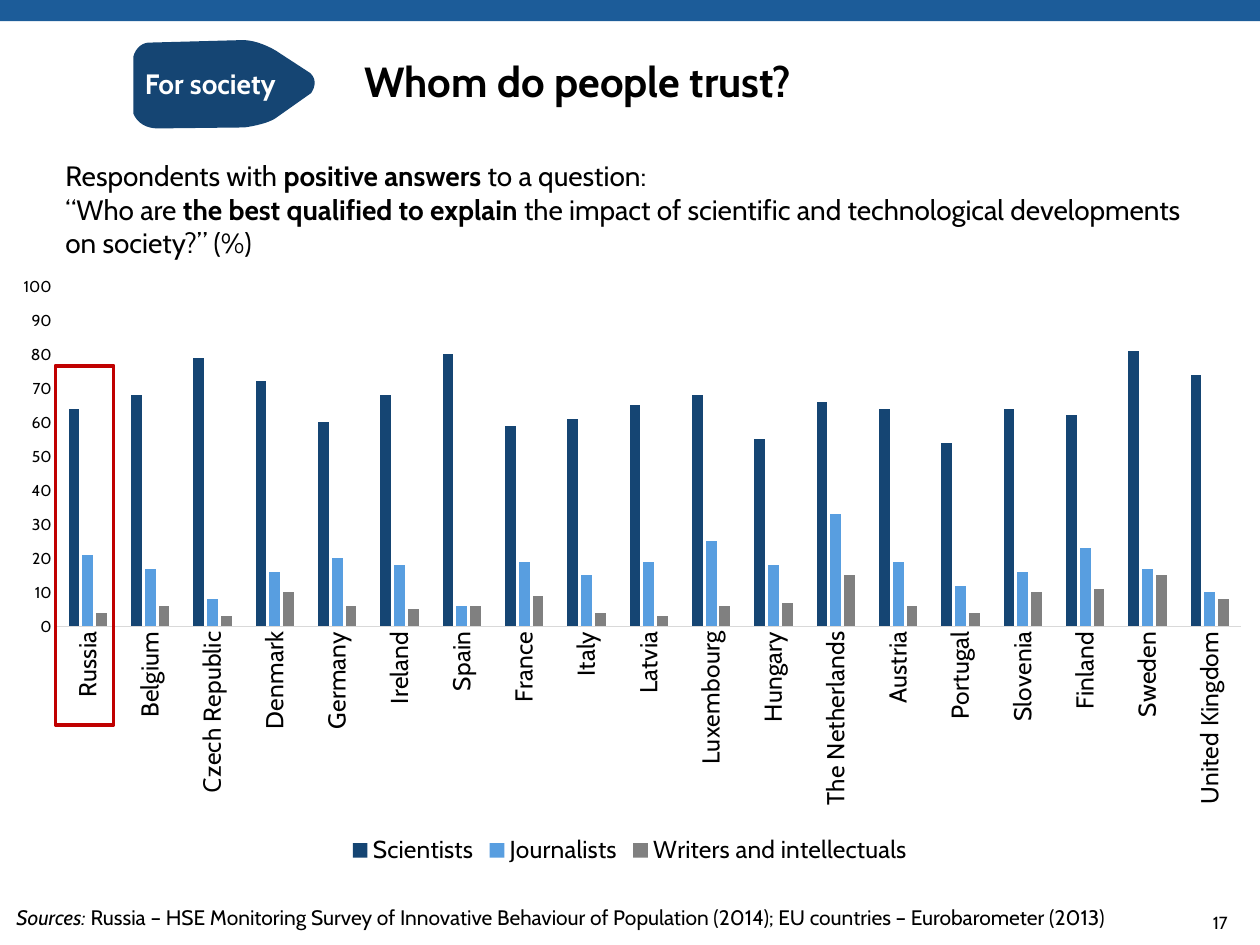
from typing import NamedTuple, Optional

from lxml import etree
from pptx import Presentation
from pptx import util as u
from pptx.chart.data import CategoryChartData
from pptx.dml.color import RGBColor
from pptx.enum import chart as ch, shapes, text
from pptx.oxml import parse_xml
from pptx.oxml.ns import nsdecls, qn

FONT = "Cabin"
BLACK = RGBColor(0x00, 0x00, 0x00)
WHITE = RGBColor(0xFF, 0xFF, 0xFF)
BLUE = RGBColor(0x1C, 0x5C, 0x99)
NAVY = RGBColor(0x15, 0x45, 0x73)
SKY = RGBColor(0x58, 0x9E, 0xE0)
GREY = RGBColor(0x80, 0x80, 0x80)
PALE = RGBColor(0xD9, 0xD9, 0xD9)
RED = RGBColor(0xC0, 0x00, 0x00)


class Box(NamedTuple):
    """Left, top, width and height in centimetres."""
    x: float
    y: float
    w: float
    h: float

    def emu(self) -> list:
        return [u.Cm(v) for v in self]


class Run(NamedTuple):
    text: str
    bold: bool = False
    italic: bool = False


class Series(NamedTuple):
    name: str
    color: RGBColor
    values: tuple


class Segment(NamedTuple):
    """Curve leaving straight from the last point towards its control."""
    control: tuple
    end: tuple


COUNTRIES = ("Russia", "Belgium", "Сzech Republic", "Denmark", "Germany", "Ireland",
             "Spain", "France", "Italy", "Latvia", "Luxembourg", "Hungary",
             "The Netherlands", "Austria", "Portugal", "Slovenia", "Finland",
             "Sweden", "United Kingdom")
ANSWERS = (
    Series("Scientists", NAVY, (64, 68, 79, 72, 60, 68, 80, 59, 61, 65,
                                68, 55, 66, 64, 54, 64, 62, 81, 74)),
    Series("Journalists", SKY, (21, 17, 8, 16, 20, 18, 6, 19, 15, 19,
                                25, 18, 33, 19, 12, 16, 23, 17, 10)),
    Series("Writers and intellectuals", GREY, (4, 6, 3, 10, 6, 5, 6, 9, 4, 3,
                                               6, 7, 15, 6, 4, 10, 11, 15, 8)),
)
TAG_START = (2.69, 1.14)
TAG_OUTLINE = (
    Segment((2.69, 2.29), (2.69, 2.29)),
    Segment((2.79, 2.59), (3.18, 2.59)),
    Segment((4.93, 2.57), (4.93, 2.57)),
    Segment((5.41, 2.51), (5.59, 2.36)),
    Segment((6.27, 1.88), (6.27, 1.88)),
    Segment((6.45, 1.65), (6.25, 1.47)),
    Segment((5.59, 1.04), (5.59, 1.04)),
    Segment((5.21, 0.79), (4.85, 0.81)),
    Segment((3.0, 0.86), (3.0, 0.86)),
    Segment((2.77, 0.86), TAG_START),
)


def style_font(font, size: float, color: RGBColor = BLACK,
               bold: bool = False, italic: bool = False) -> None:
    font.name, font.size = FONT, u.Pt(size)
    font.bold, font.italic = bold, italic
    font.color.rgb = color


def write(sp, *lines: tuple, size: float, color: RGBColor = BLACK,
          align=text.PP_ALIGN.LEFT, anchor=text.MSO_ANCHOR.TOP, grow: bool = False) -> None:
    """Fill a shape with one paragraph; each line is a tuple of runs."""
    tf = sp.text_frame
    tf.word_wrap = True
    tf.vertical_anchor = anchor
    tf.auto_size = (text.MSO_AUTO_SIZE.SHAPE_TO_FIT_TEXT if grow
                    else text.MSO_AUTO_SIZE.NONE)
    p = tf.paragraphs[0]
    p.alignment = align
    for i, line in enumerate(lines):
        if i:
            p.add_line_break()
        for run in line:
            r = p.add_run()
            r.text = run.text
            style_font(r.font, size, color, run.bold, run.italic)


def paint(sp, fill: Optional[RGBColor] = None, line: Optional[RGBColor] = None) -> None:
    sp.shadow.inherit = False
    if fill is None:
        sp.fill.background()
    else:
        sp.fill.solid()
        sp.fill.fore_color.rgb = fill
    if line is None:
        sp.line.fill.background()
    else:
        sp.line.color.rgb = line
        sp.line.width = u.Pt(2.25)


def add_rect(s, box: Box, **colors):
    sp = s.shapes.add_shape(shapes.MSO_SHAPE.RECTANGLE, *box.emu())
    paint(sp, **colors)
    return sp


def add_outline(s, start: tuple, segments: tuple, fill: RGBColor, steps: int = 12) -> None:
    points, last = [], start
    for control, end in segments:
        n = 1 if control == end else steps
        for t in (k / n for k in range(1, n + 1)):
            weights = ((1 - t) ** 3 + 3 * t * (1 - t) ** 2, 3 * t * t * (1 - t), t ** 3)
            points.append(tuple(u.Cm(sum(w * q[i] for w, q in zip(weights, (last, control, end))))
                                for i in (0, 1)))
        last = end
    builder = s.shapes.build_freeform(u.Cm(start[0]), u.Cm(start[1]))
    builder.add_line_segments(points, close=True)
    paint(builder.convert_to_shape(), fill=fill)


def add_trust_chart(s, box: Box) -> None:
    data = CategoryChartData(number_format="#,##0")
    data.categories = COUNTRIES
    for answer in ANSWERS:
        data.add_series(answer.name, answer.values)
    chart = s.shapes.add_chart(ch.XL_CHART_TYPE.COLUMN_CLUSTERED, *box.emu(), data).chart
    style_font(chart.font, 10)
    chart.has_title = False

    # Columns
    plot = chart.plots[0]
    plot.gap_width, plot.overlap, plot.vary_by_categories = 219, -27, False
    for series, answer in zip(plot.series, ANSWERS):
        series.format.fill.solid()
        series.format.fill.fore_color.rgb = answer.color

    # Axes
    cat, val = chart.category_axis, chart.value_axis
    for axis, size in ((cat, 14), (val, 9)):
        axis.has_major_gridlines = False
        axis.major_tick_mark = axis.minor_tick_mark = ch.XL_TICK_MARK.NONE
        style_font(axis.tick_labels.font, size)
    cat.format.line.color.rgb = PALE
    cat.format.line.width = u.Pt(0.75)
    cat._element.find(qn("c:txPr")).find(qn("a:bodyPr")).set("rot", "-5400000")
    val.minimum_scale, val.maximum_scale, val.major_unit = 0, 100, 10
    val.format.line.fill.background()

    # Legend
    chart.has_legend = True
    chart.legend.position = ch.XL_LEGEND_POSITION.BOTTOM
    chart.legend.include_in_layout = False
    style_font(chart.legend.font, 14)

    # Inner plot area as shares of the chart
    area = chart._chartSpace.chart.plotArea
    for old in area.findall(qn("c:layout")):
        area.remove(old)
    layout = parse_xml(f"<c:layout {nsdecls('c')}><c:manualLayout/></c:layout>")
    settings = (("layoutTarget", "inner"), ("xMode", "edge"), ("yMode", "edge"),
                ("x", "0.045"), ("y", "0.032"), ("w", "0.94"), ("h", "0.564"))
    for tag, value in settings:
        etree.SubElement(layout[0], qn(f"c:{tag}")).set("val", value)
    area.insert(0, layout)


def main() -> None:
    prs = Presentation()
    prs.slide_width, prs.slide_height = u.Cm(25.4), u.Cm(19.05)
    s = prs.slides.add_slide(prs.slide_layouts[5])

    # Header band, page number and title
    add_rect(s, Box(0, 0, 25.4, 0.43), fill=BLUE)
    number = s.shapes.add_textbox(*Box(23.93, 18.26, 1.07, 0.53).emu())
    write(number, (Run("17"),), size=10, align=text.PP_ALIGN.RIGHT)
    title = s.shapes.title
    title.left, title.top, title.width, title.height = Box(7.09, 0.74, 12.93, 1.78).emu()
    write(title, (Run("Whom do people trust?", bold=True),), size=24,
          anchor=text.MSO_ANCHOR.MIDDLE)

    # Survey question
    question = s.shapes.add_textbox(*Box(1.07, 3.07, 23.6, 2.31).emu())
    write(question,
          (Run("Respondents with "), Run("positive answers ", bold=True), Run("to a question:")),
          (Run("“Who are "), Run("the best qualified to explain ", bold=True),
           Run("the impact of scientific and technological developments on society?” (%)")),
          size=16, grow=True)

    # Chart with Russia framed
    add_trust_chart(s, Box(0, 5.38, 25.4, 12.17))
    add_rect(s, Box(1.12, 7.37, 1.17, 7.24), line=RED)

    # Sources
    sources = s.shapes.add_textbox(*Box(0.08, 18.11, 24.23, 0.76).emu())
    write(sources, (Run("Sources:", italic=True),
                    Run(" Russia – HSE Monitoring Survey of Innovative Behaviour of Population "
                        "(2014); EU countries – Eurobarometer (2013)")), size=12, grow=True)

    # Pointed tag
    add_outline(s, TAG_START, TAG_OUTLINE, NAVY)
    label = add_rect(s, Box(2.92, 1.35, 3.1, 0.69), fill=NAVY)
    tf = label.text_frame
    tf.margin_left = tf.margin_top = tf.margin_right = tf.margin_bottom = 0
    write(label, (Run("For society", bold=True),), size=16, color=WHITE, grow=True)

    prs.save("out.pptx")


if __name__ == "__main__":
    main()
